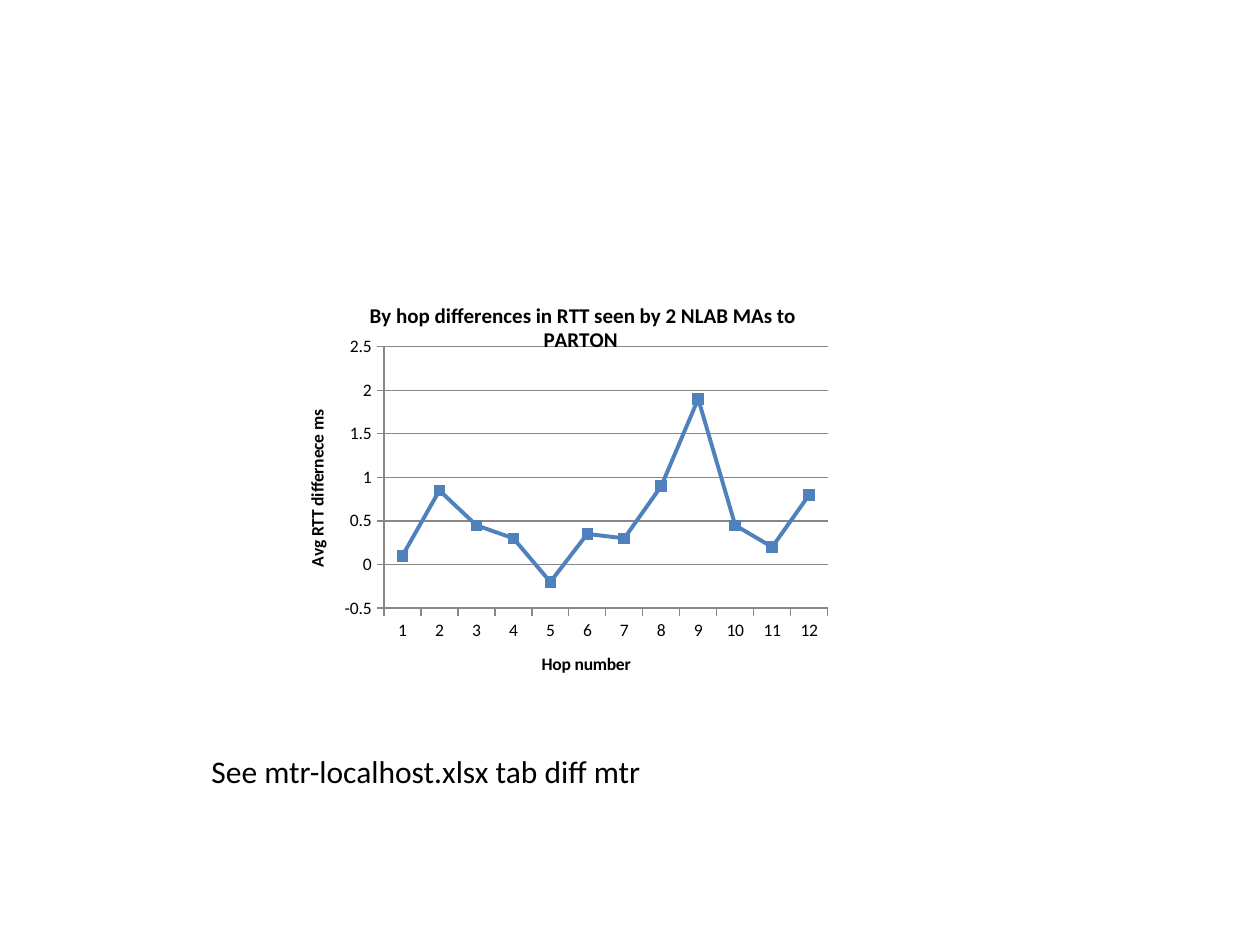
from dataclasses import dataclass
from typing import Any

from lxml.etree import SubElement
from pptx import Presentation
from pptx.chart.data import CategoryChartData
from pptx.dml.color import RGBColor
from pptx.enum.chart import XL_AXIS_CROSSES as Crosses
from pptx.enum.chart import XL_CHART_TYPE as ChartType
from pptx.enum.chart import XL_MARKER_STYLE as Marker
from pptx.enum.chart import XL_TICK_LABEL_POSITION as LabelPos
from pptx.enum.chart import XL_TICK_MARK as Tick
from pptx.enum.text import MSO_AUTO_SIZE as AutoSize
from pptx.oxml.ns import qn
from pptx.util import Inches, Pt


@dataclass(frozen=True)
class Theme:
    font: str = "Calibri"
    text: RGBColor = RGBColor(0x00, 0x00, 0x00)
    series: RGBColor = RGBColor(0x4F, 0x81, 0xBD)
    rule: RGBColor = RGBColor(0x87, 0x87, 0x87)
    axis_size: Pt = Pt(10)
    title_size: Pt = Pt(12)
    note_size: Pt = Pt(18)


@dataclass(frozen=True)
class AxisStyle:
    axis: Any
    title: str
    gridlines: bool


THEME = Theme()
RTT_DIFFERENCES = (0.1, 0.85, 0.45, 0.3, -0.2, 0.35, 0.3, 0.9, 1.9, 0.45, 0.2, 0.8)


def style_font(font: Any, size: Pt, bold: bool = False) -> None:
    font.name, font.size, font.bold = THEME.font, size, bold
    font.color.rgb = THEME.text


def style_rule(line: Any) -> None:
    line.color.rgb = THEME.rule
    line.width = Pt(0.75)


def set_title(owner: Any, text: str, size: Pt) -> None:
    """Write a bold title on a chart title or axis title."""
    p = owner.text_frame.paragraphs[0]
    p.text = text
    style_font(p.font, size, bold=True)


def set_layout(parent: Any, index: int, **values: Any) -> None:
    """Give a chart part a manual layout, in fractions of the chart."""
    for old in parent.findall(qn("c:layout")):
        parent.remove(old)
    layout = SubElement(parent, qn("c:layout"))
    manual = SubElement(layout, qn("c:manualLayout"))
    for tag, value in values.items():
        SubElement(manual, qn(f"c:{tag}")).set("val", str(value))
    parent.insert(index, layout)


def style_axis(style: AxisStyle) -> None:
    axis = style.axis
    set_title(axis.axis_title, style.title, THEME.axis_size)
    axis.major_tick_mark, axis.minor_tick_mark = Tick.OUTSIDE, Tick.NONE
    axis.tick_label_position = LabelPos.LOW
    axis.has_major_gridlines = style.gridlines
    if style.gridlines:
        style_rule(axis.major_gridlines.format.line)
    style_rule(axis.format.line)


def add_hop_chart(slide: Any) -> None:
    data = CategoryChartData()
    data.categories = [str(hop) for hop in range(1, len(RTT_DIFFERENCES) + 1)]
    data.add_series("Series 1", RTT_DIFFERENCES)
    chart = slide.shapes.add_chart(
        ChartType.LINE_MARKERS, Inches(2), Inches(2.25), Inches(4.76), Inches(3.58), data
    ).chart
    chart.has_legend = False
    style_font(chart.font, THEME.axis_size)

    # Title laid over the top of the plot
    set_title(chart.chart_title, "By hop differences in RTT seen by 2 NLAB MAs to PARTON ",
              THEME.title_size)
    title = chart.chart_title._element
    set_layout(title, 1, xMode="edge", yMode="edge", x=0.19, y=0.03)
    title.find(qn("c:overlay")).set("val", "1")

    # Axes
    style_axis(AxisStyle(chart.category_axis, "Hop number", False))
    style_axis(AxisStyle(chart.value_axis, "Avg RTT differnece ms", True))
    values = chart.value_axis
    values.minimum_scale, values.maximum_scale, values.major_unit = -0.5, 2.5, 0.5
    values.crosses = Crosses.MINIMUM
    values.tick_labels.number_format = "General"
    values.tick_labels.number_format_is_linked = False
    set_layout(chart._chartSpace.chart.plotArea, 0, layoutTarget="inner", xMode="edge",
               yMode="edge", x=0.22, y=0.14, w=0.74, h=0.58)

    # Line and square markers
    plot = chart.plots[0]
    plot.vary_by_categories = False
    series = plot.series[0]
    series.smooth = False
    series.format.line.color.rgb = THEME.series
    series.format.line.width = Pt(2.25)
    series.marker.style, series.marker.size = Marker.SQUARE, 6
    series.marker.format.fill.solid()
    series.marker.format.fill.fore_color.rgb = THEME.series
    series.marker.format.line.color.rgb = THEME.series


def add_note(slide: Any, text: str) -> None:
    tf = slide.shapes.add_textbox(
        Inches(1.58), Inches(5.92), Inches(3.65), Inches(0.4)).text_frame
    tf.word_wrap = False
    tf.auto_size = AutoSize.SHAPE_TO_FIT_TEXT
    p = tf.paragraphs[0]
    p.text = text
    style_font(p.font, THEME.note_size)


def main() -> None:
    prs = Presentation()
    prs.slide_width, prs.slide_height = Inches(10), Inches(7.5)
    slide = prs.slides.add_slide(prs.slide_layouts.get_by_name("Blank"))
    add_hop_chart(slide)
    add_note(slide, "See mtr-localhost.xlsx tab diff mtr")
    prs.save("out.pptx")


if __name__ == "__main__":
    main()
